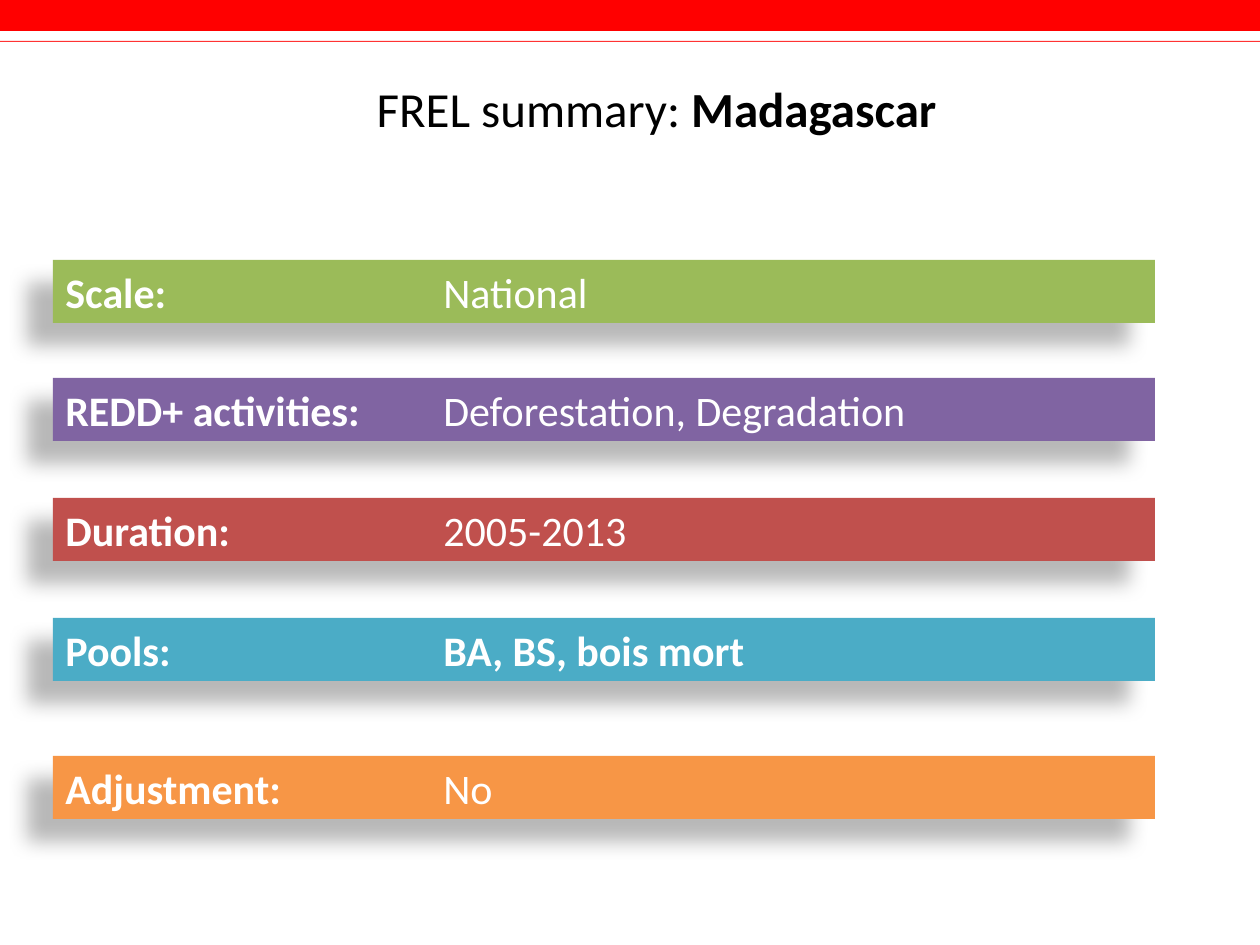
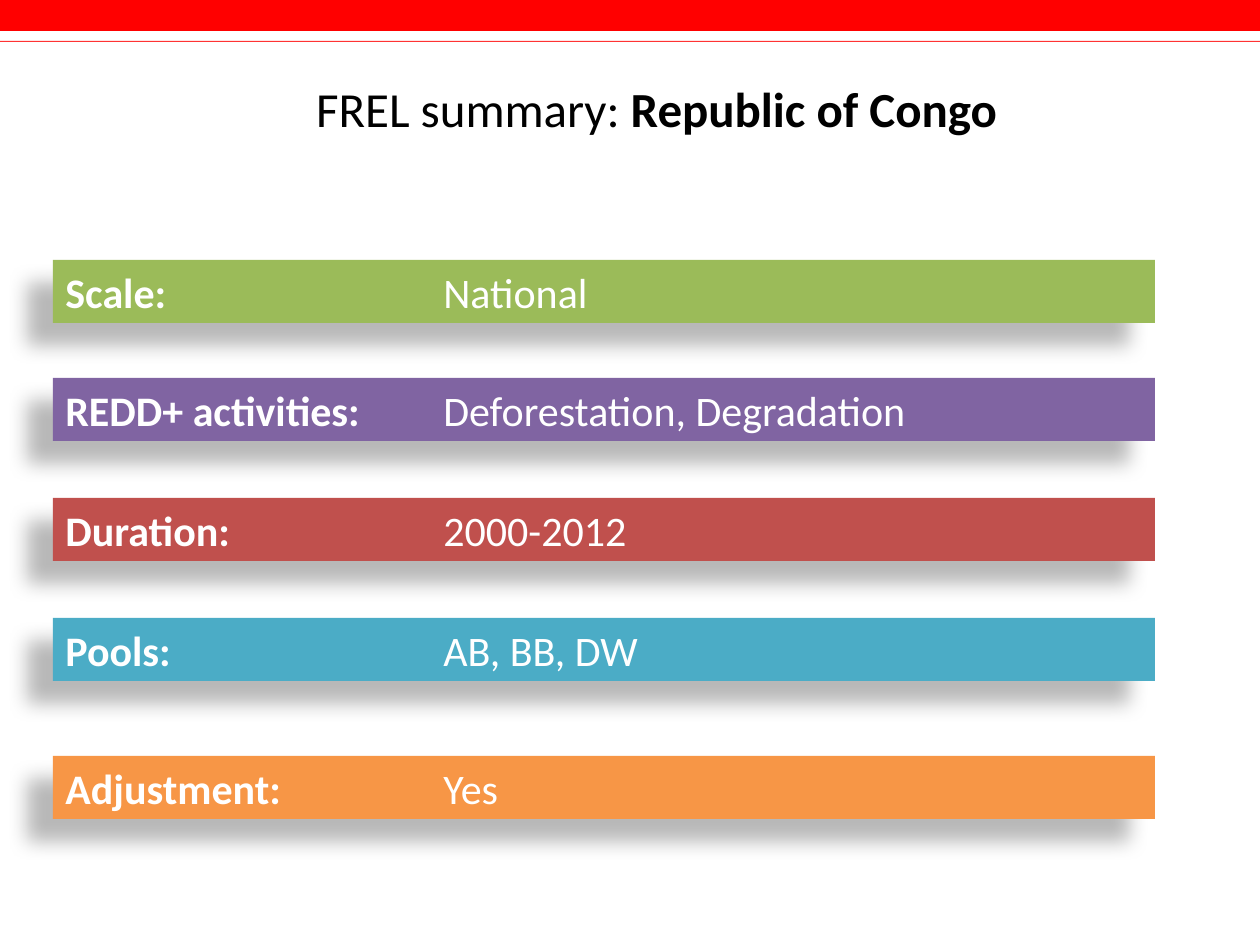
from lxml.etree import SubElement
from pptx import Presentation
from pptx.dml.color import RGBColor
from pptx.enum.shapes import MSO_SHAPE
from pptx.enum.text import MSO_ANCHOR, MSO_AUTO_SIZE, PP_ALIGN
from pptx.oxml.ns import qn
from pptx.util import Pt

PX = 914400 / 126
FONT = "Calibri"
WHITE = RGBColor(0xFF, 0xFF, 0xFF)
BLACK = RGBColor(0x00, 0x00, 0x00)
RED = RGBColor(0xFF, 0x00, 0x00)
LIGHT_RED = RGBColor(0xFF, 0x33, 0x33)
GREEN = RGBColor(0x9B, 0xBB, 0x59)
PURPLE = RGBColor(0x80, 0x64, 0xA2)
BRICK = RGBColor(0xC0, 0x50, 0x4D)
TEAL = RGBColor(0x4B, 0xAC, 0xC6)
ORANGE = RGBColor(0xF7, 0x96, 0x46)

# label, top, colour
ROWS = [
    ("Scale:", 260, GREEN),
    ("REDD+ activities:", 378, PURPLE),
    ("Duration:", 498, BRICK),
    ("Pools:", 618, TEAL),
    ("Adjustment:", 756, ORANGE),
]
# country, one value per row, labels whose value is bold
SUMMARIES = [
    ("Madagascar",
     ["National", "Deforestation, Degradation", "2005-2013", "BA, BS, bois mort", "No"],
     {"Pools:"}),
    ("Republic of Congo",
     ["National", "Deforestation, Degradation", "2000-2012", "AB, BB, DW", "Yes"],
     set()),
]

SLIDE_W, SLIDE_H = 1260, 945
TITLE_BOX = (126, 42, 1061, 132)
ROW_LEFT, ROW_W, ROW_H = 53, 1102, 63
VALUE_TAB = 378


def px(n):
    return round(n * PX)


def add_run(p, text, size, color, bold=False):
    r = p.add_run()
    r.text = text
    r.font.name = FONT
    r.font.size = Pt(size)
    r.font.color.rgb = color
    r.font.bold = bold


def add_rect(slide, box, fill):
    sp = slide.shapes.add_shape(MSO_SHAPE.RECTANGLE, *map(px, box))
    sp.shadow.inherit = False
    sp.fill.solid()
    sp.fill.fore_color.rgb = fill
    sp.line.fill.background()
    return sp


def add_drop_shadow(sp):
    """Cast a soft black shadow down and to the left."""
    effects = sp._element.spPr.find(qn("a:effectLst"))
    shadow = SubElement(effects, qn("a:outerShdw"), blurRad=str(Pt(11.8)),
                        dist=str(Pt(19.7)), dir=str(141 * 60000),
                        algn="tl", rotWithShape="0")
    color = SubElement(shadow, qn("a:srgbClr"), val=str(BLACK))
    SubElement(color, qn("a:alpha"), val="28000")


def add_title(slide, country):
    tf = slide.shapes.add_textbox(*map(px, TITLE_BOX)).text_frame
    tf.word_wrap = True
    tf.vertical_anchor = MSO_ANCHOR.MIDDLE
    p = tf.paragraphs[0]
    p.alignment = PP_ALIGN.CENTER
    add_run(p, "FREL summary: ", 28, BLACK)
    add_run(p, country, 28, BLACK, bold=True)


def add_row(slide, label, value, top, fill, bold_value):
    sp = add_rect(slide, (ROW_LEFT, top, ROW_W, ROW_H), fill)
    add_drop_shadow(sp)
    tf = sp.text_frame
    tf.word_wrap = True
    tf.auto_size = MSO_AUTO_SIZE.SHAPE_TO_FIT_TEXT
    tf.vertical_anchor = MSO_ANCHOR.TOP
    p = tf.paragraphs[0]
    p.alignment = PP_ALIGN.LEFT
    tabs = SubElement(p._p.get_or_add_pPr(), qn("a:tabLst"))
    SubElement(tabs, qn("a:tab"), pos=str(px(VALUE_TAB)), algn="l")
    add_run(p, label + "\t", 24, WHITE, bold=True)
    add_run(p, value, 24, WHITE, bold=bold_value)


def main():
    prs = Presentation()
    prs.slide_width, prs.slide_height = px(SLIDE_W), px(SLIDE_H)
    for country, values, bold_labels in SUMMARIES:
        slide = prs.slides.add_slide(prs.slide_layouts[6])
        add_rect(slide, (0, 0, SLIDE_W, 31), RED)
        add_rect(slide, (0, 41, SLIDE_W, 1), LIGHT_RED)
        add_title(slide, country)
        for (label, top, fill), value in zip(ROWS, values):
            add_row(slide, label, value, top, fill, label in bold_labels)
    prs.save("out.pptx")


if __name__ == "__main__":
    main()
